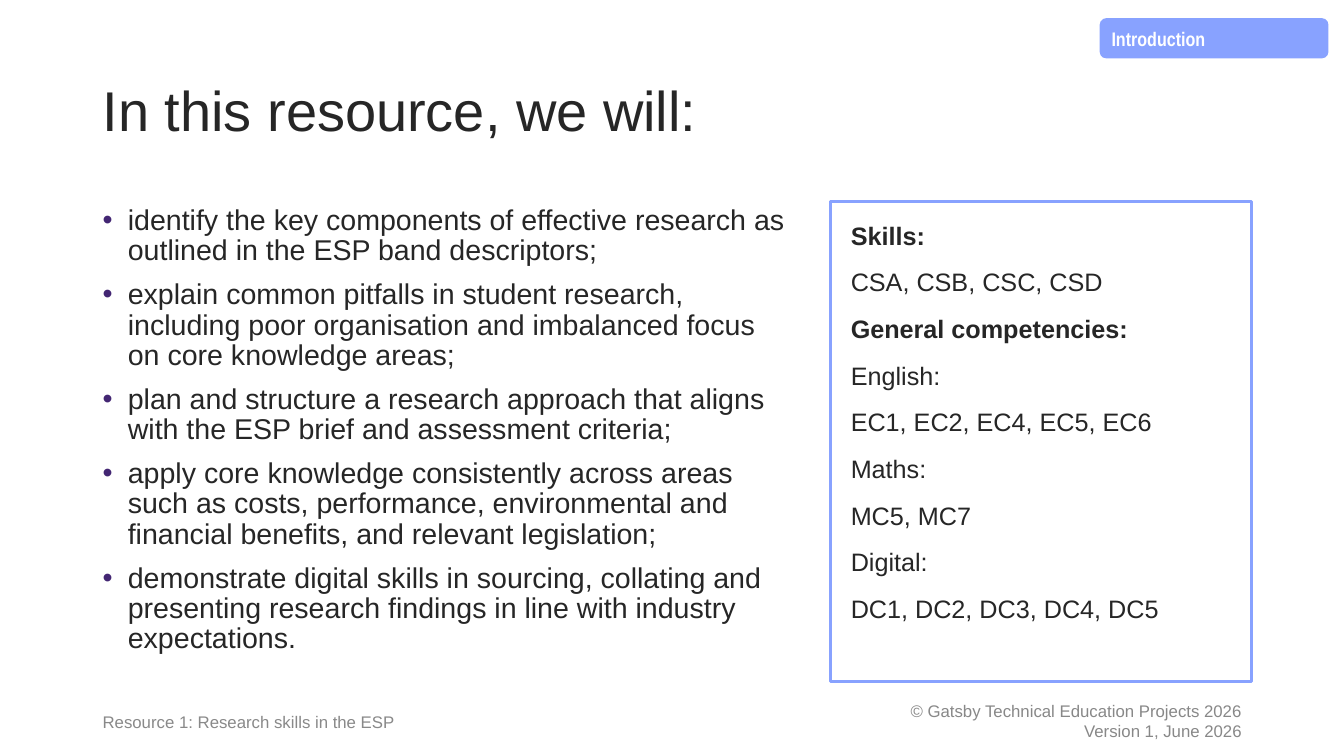
from dataclasses import dataclass

from lxml.etree import SubElement
from pptx import Presentation
from pptx.dml.color import RGBColor
from pptx.enum.shapes import MSO_SHAPE as Preset
from pptx.enum.text import MSO_ANCHOR as Anchor, PP_ALIGN as Align
from pptx.oxml.ns import qn
from pptx.util import Pt

TAG = "Introduction"
TITLE = "In this resource, we will:"
AIMS = [
    "identify the key components of effective research as outlined in the ESP band descriptors;",
    "explain common pitfalls in student research, including poor organisation "
    "and imbalanced focus on core knowledge areas;",
    "plan and structure a research approach that aligns with the ESP brief and assessment criteria;",
    "apply core knowledge consistently across areas such as costs, performance, "
    "environmental and financial benefits, and relevant legislation;",
    "demonstrate digital skills in sourcing, collating and presenting research "
    "findings in line with industry expectations.",
]
HEADINGS = ("Skills:", "General competencies:")
COMPETENCIES = [
    HEADINGS[0],
    "CSA, CSB, CSC, CSD",
    HEADINGS[1],
    "English:",
    "EC1, EC2, EC4, EC5, EC6",
    "Maths:",
    "MC5, MC7",
    "Digital:",
    "DC1, DC2, DC3, DC4, DC5",
]
RESOURCE = ["Resource 1: Research skills in the ESP"]
COPYRIGHT = ["© Gatsby Technical Education Projects 2026", "Version 1, June 2026"]


@dataclass(frozen=True)
class Theme:
    font: str = "Arial"
    tag_font: str = "Arial Narrow"
    ink: str = "262626"
    accent: str = "88A2FF"
    bullet: str = "432673"
    white: str = "FFFFFF"
    footer: str = "898989"
    copyright: str = "888888"
    title_size: float = 40
    aims_size: float = 20.4
    panel_size: float = 18
    tag_size: float = 14
    footer_size: float = 12


THEME = Theme()

# Layout, in points
WIDTH, HEIGHT = 960, 540
LEFT, RIGHT = 66.24, 894.24
BODY_TOP, BODY_HEIGHT = 144, 342.72
PANEL_WIDTH = 300.96
FOOTER_TOP, FOOTER_HEIGHT = 500.4, 28.8
COPYRIGHT_WIDTH = 324
PARAGRAPH_GAP = 10
BULLET_INDENT = 18


def rgb(colour):
    return RGBColor.from_string(colour)


def add_bullet(paragraph):
    properties = paragraph._p.get_or_add_pPr()
    properties.set("marL", str(Pt(BULLET_INDENT)))
    properties.set("indent", str(-Pt(BULLET_INDENT)))
    colour = SubElement(properties, qn("a:buClr"))
    SubElement(colour, qn("a:srgbClr"), val=THEME.bullet)
    SubElement(properties, qn("a:buFont"), typeface=THEME.font)
    SubElement(properties, qn("a:buChar"), char="•")


def write(shape, lines, size, colour=THEME.ink, font=THEME.font, anchor=Anchor.TOP,
          align=Align.LEFT, spacing=1.08, gap=0, inset=(7.2, 3.6), bold=(), bullets=False):
    """Fill a shape with one paragraph per line; lines listed in bold are bold."""
    frame = shape.text_frame
    frame.word_wrap = True
    frame.vertical_anchor = anchor
    frame.margin_left = frame.margin_right = Pt(inset[0])
    frame.margin_top = frame.margin_bottom = Pt(inset[1])
    for index, line in enumerate(lines):
        paragraph = frame.add_paragraph() if index else frame.paragraphs[0]
        paragraph.text = line
        paragraph.alignment = align
        paragraph.line_spacing = spacing
        if index and gap:
            paragraph.space_before = Pt(gap)
        if bullets:
            add_bullet(paragraph)
        paragraph.font.name = font
        paragraph.font.size = Pt(size)
        paragraph.font.bold = line in bold
        paragraph.font.color.rgb = rgb(colour)


def add_text(slide, box, lines, size, **style):
    write(slide.shapes.add_textbox(*map(Pt, box)), lines, size, **style)


def add_box(slide, preset, box, fill, line=None):
    shape = slide.shapes.add_shape(preset, *map(Pt, box))
    shape.shadow.inherit = False
    shape.fill.solid()
    shape.fill.fore_color.rgb = rgb(fill)
    if line:
        shape.line.color.rgb = rgb(line)
        shape.line.width = Pt(2.25)
    else:
        shape.line.fill.background()
    return shape


def main():
    presentation = Presentation()
    presentation.slide_width, presentation.slide_height = Pt(WIDTH), Pt(HEIGHT)
    slide = presentation.slides.add_slide(presentation.slide_layouts[6])

    add_text(slide, (RIGHT - COPYRIGHT_WIDTH, FOOTER_TOP, COPYRIGHT_WIDTH, FOOTER_HEIGHT),
             COPYRIGHT, THEME.footer_size, colour=THEME.copyright,
             anchor=Anchor.MIDDLE, align=Align.RIGHT, spacing=1.0)
    add_text(slide, (LEFT, 28.8, RIGHT - LEFT, 104.4), [TITLE], THEME.title_size,
             anchor=Anchor.MIDDLE, spacing=0.9)
    add_text(slide, (LEFT, BODY_TOP, 504, BODY_HEIGHT), AIMS, THEME.aims_size,
             spacing=0.88, gap=PARAGRAPH_GAP, bullets=True)

    panel = add_box(slide, Preset.RECTANGLE,
                    (RIGHT - PANEL_WIDTH, BODY_TOP, PANEL_WIDTH, BODY_HEIGHT),
                    THEME.white, THEME.accent)
    write(panel, COMPETENCIES, THEME.panel_size, gap=PARAGRAPH_GAP,
          inset=(14.4, 11.52), bold=HEADINGS)

    tag = add_box(slide, Preset.FLOWCHART_ALTERNATE_PROCESS,
                  (785.52, 12.96, 163.44, 28.8), THEME.accent)
    write(tag, [TAG], THEME.tag_size, colour=THEME.white, font=THEME.tag_font, bold=[TAG])

    add_text(slide, (LEFT, FOOTER_TOP, 331.2, FOOTER_HEIGHT), RESOURCE, THEME.footer_size,
             colour=THEME.footer, anchor=Anchor.MIDDLE)

    presentation.save("out.pptx")


if __name__ == "__main__":
    main()
